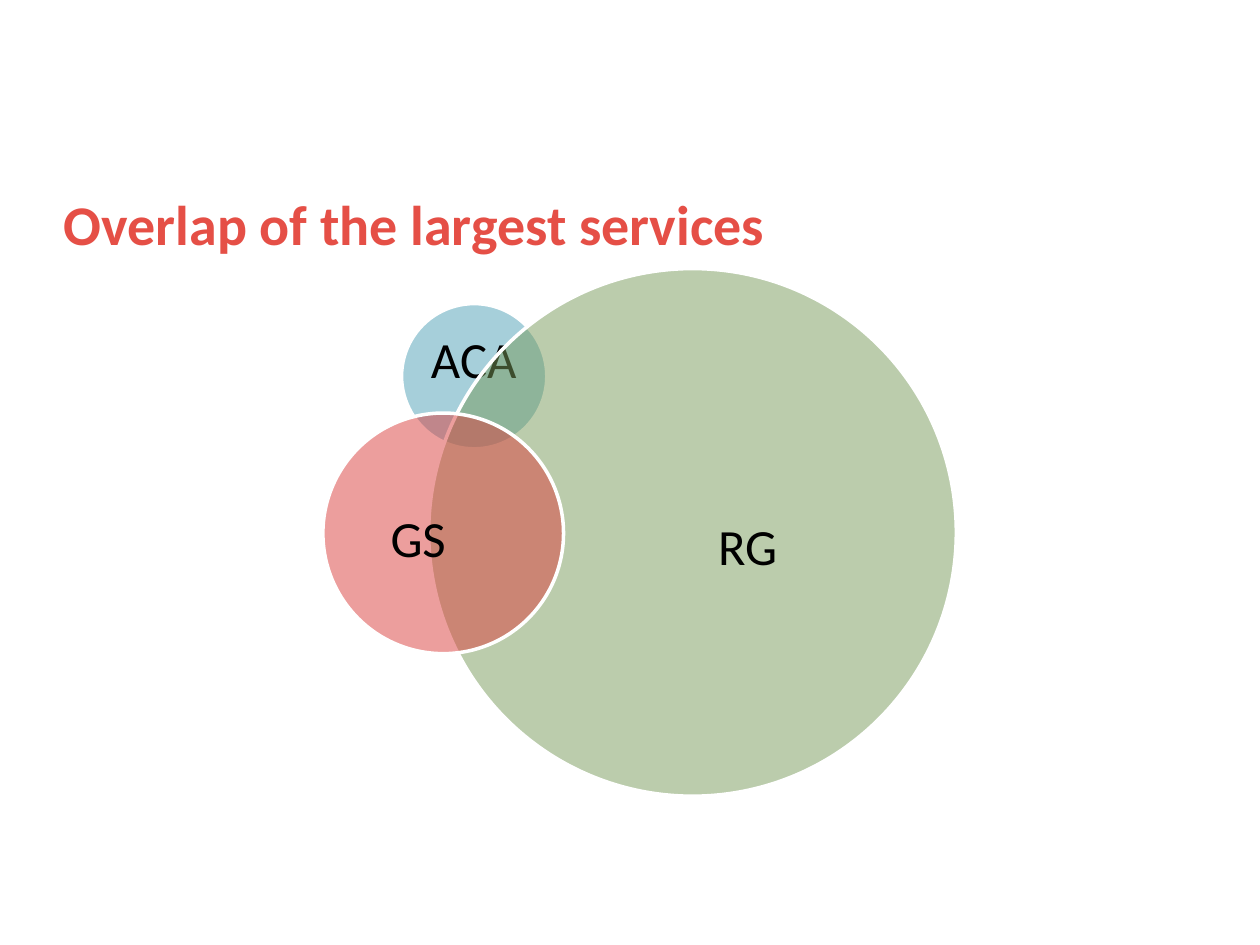
"""Build a slide with a Venn diagram of the three largest services."""
import dataclasses

import lxml.etree
import pptx
import pptx.dml.color
import pptx.enum.shapes
import pptx.enum.text
import pptx.oxml.ns
import pptx.util

Pt = pptx.util.Pt
Color = pptx.dml.color.RGBColor.from_string
Anchor = pptx.enum.text.MSO_ANCHOR
Align = pptx.enum.text.PP_ALIGN


@dataclasses.dataclass(frozen=True)
class Theme:
    font: str = "Calibri"
    title_size: float = 32
    label_size: float = 29
    title: str = "E54F46"
    label: str = "000000"
    outline: str = "FFFFFF"
    aca: str = "4EA0B7"
    rg: str = "789A5B"
    gs: str = "DB3F3D"


theme = Theme()
presentation = pptx.Presentation()
presentation.slide_width, presentation.slide_height = Pt(720), Pt(540)
slide = presentation.slides.add_slide(presentation.slide_layouts[6])


def add_text(text, box, size, color, anchor, align, line_spacing, bold=False):
    """Place one paragraph in a text box without margins."""
    frame = slide.shapes.add_textbox(*map(Pt, box)).text_frame
    frame.word_wrap = True
    frame.vertical_anchor = anchor
    frame.margin_left = frame.margin_right = frame.margin_top = frame.margin_bottom = 0
    paragraph = frame.paragraphs[0]
    paragraph.text = text
    paragraph.alignment = align
    paragraph.line_spacing = line_spacing
    paragraph.font.name = theme.font
    paragraph.font.size = Pt(size)
    paragraph.font.bold = bold
    paragraph.font.color.rgb = Color(color)


def add_circle(left, top, diameter, color):
    """Draw a half-transparent circle with a light outline."""
    shape = slide.shapes.add_shape(
        pptx.enum.shapes.MSO_SHAPE.OVAL, Pt(left), Pt(top), Pt(diameter), Pt(diameter))
    shape.shadow.inherit = False
    shape.fill.solid()
    shape.fill.fore_color.rgb = Color(color)
    fill_color = shape.fill._xPr.find(".//" + pptx.oxml.ns.qn("a:srgbClr"))
    lxml.etree.SubElement(fill_color, pptx.oxml.ns.qn("a:alpha"), val="50000")
    shape.line.color.rgb = Color(theme.outline)
    shape.line.width = Pt(2)


add_text("Overlap of the largest services", (36.5, 57.5, 648, 89.5), theme.title_size,
         theme.title, Anchor.BOTTOM, Align.LEFT, Pt(43.2), bold=True)

services = [
    ("ACA", theme.aca, (229.5, 173.5, 83), (240.5, 188, 60.5, 37.5)),
    ("RG", theme.rg, (245, 153.5, 301.5), (337, 231, 180.5, 165.5)),
    ("GS", theme.gs, (184.5, 236, 137.5), (197.5, 271.5, 83, 75.5)),
]
for name, color, circle, label_box in services:
    add_circle(*circle, color)
    add_text(name, label_box, theme.label_size, theme.label,
             Anchor.MIDDLE, Align.CENTER, 0.9)

presentation.save("out.pptx")
